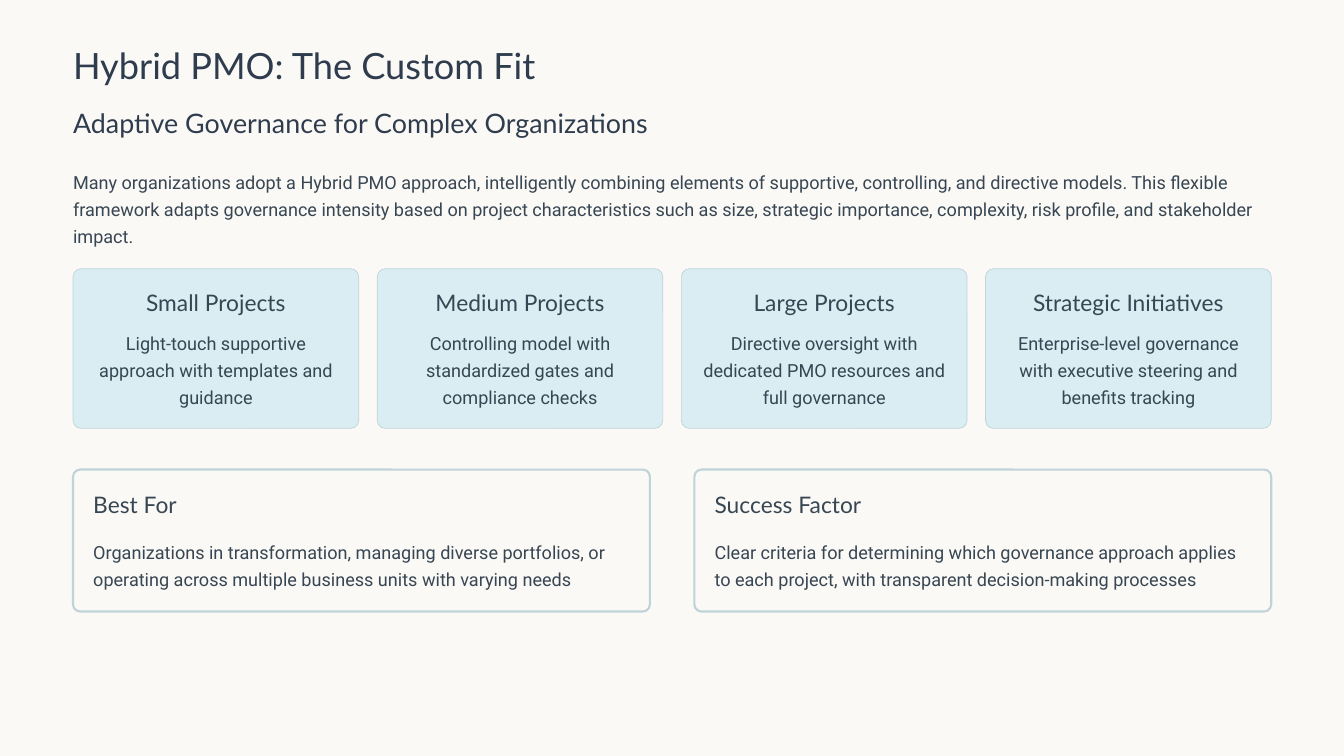
from dataclasses import dataclass, field

from pptx import Presentation
from pptx.dml.color import RGBColor
from pptx.enum import shapes, text
from pptx.util import Pt


def style(font, size, spacing, color):
    """Return the format values of one kind of text."""
    return {
        "font": {"name": font, "size": Pt(size)},
        "color": RGBColor.from_string(color),
        "spacing": Pt(spacing),
    }


@dataclass(frozen=True)
class Theme:
    """Hold the colours and type styles of the slide."""
    background: str = "FAF9F5"
    card: str = "D9EDF2"
    border: str = "BFD3D8"
    title: dict = field(default_factory=lambda: style("Lato", 31, 39, "2E3C4E"))
    subtitle: dict = field(default_factory=lambda: style("Lato", 23, 29, "2E3C4E"))
    heading: dict = field(default_factory=lambda: style("Lato", 19.5, 24, "384653"))
    body: dict = field(default_factory=lambda: style("Roboto", 15.5, 23, "384653"))


THEME = Theme()
LEFT = 62.64
WIDTH = 1027
CARDS = [
    ("Small Projects", "Light-touch supportive approach with templates and guidance"),
    ("Medium Projects", "Controlling model with standardized gates and compliance checks"),
    ("Large Projects", "Directive oversight with dedicated PMO resources and full governance"),
    ("Strategic Initiatives", "Enterprise-level governance with executive steering and benefits tracking"),
]
PANELS = [
    ("Best For", "Organizations in transformation, managing diverse portfolios, or "
     "operating across multiple business units with varying needs"),
    ("Success Factor", "Clear criteria for determining which governance approach applies "
     "to each project, with transparent decision-making processes"),
]
INTRO = (
    "Many organizations adopt a Hybrid PMO approach, intelligently combining elements of "
    "supportive, controlling, and directive models. This flexible framework adapts governance "
    "intensity based on project characteristics such as size, strategic importance, complexity, "
    "risk profile, and stakeholder impact."
)


def set_values(target, values):
    """Set each named attribute of the target."""
    for name, value in values.items():
        setattr(target, name, value)


def add_text(slide, box, words, look, wrap=True, align=text.PP_ALIGN.LEFT):
    """Add a text box without margins."""
    frame = slide.shapes.add_textbox(*map(Pt, box)).text_frame
    set_values(frame, {
        "margin_left": 0, "margin_top": 0, "margin_right": 0, "margin_bottom": 0,
        "word_wrap": wrap,
    })
    paragraph = frame.paragraphs[0]
    set_values(paragraph, {"alignment": align, "line_spacing": look["spacing"]})
    run = paragraph.add_run()
    run.text = words
    set_values(run.font, look["font"])
    run.font.color.rgb = look["color"]


def add_rounded_box(slide, box, fill, line_width, rounding):
    """Add a bordered rectangle with rounded corners."""
    shape = slide.shapes.add_shape(shapes.MSO_SHAPE.ROUNDED_RECTANGLE, *map(Pt, box))
    shape.shadow.inherit = False
    shape.adjustments[0] = rounding
    shape.fill.solid()
    shape.fill.fore_color.rgb = RGBColor.from_string(fill)
    shape.line.color.rgb = RGBColor.from_string(THEME.border)
    shape.line.width = Pt(line_width)


def add_header(slide, box):
    """Place the title, subtitle and introduction."""
    left, top, width, height = box
    add_text(slide, (left, top, width, 38.9), "Hybrid PMO: The Custom Fit", THEME.title, wrap=False)
    add_text(slide, (left, top + 54.72, width, 29.5),
             "Adaptive Governance for Complex Organizations", THEME.subtitle, wrap=False)
    add_text(slide, (left, top + 107.28, width, height - 107.28), INTRO, THEME.body)


def add_card(slide, box, heading, body):
    """Place a filled card with centred text."""
    left, top, width, height = box
    inset = 16
    center = text.PP_ALIGN.CENTER
    add_rounded_box(slide, box, THEME.card, 0.6, 0.05)
    add_text(slide, (left + inset, top + 16.56, width - 2 * inset, 24.5), heading,
             THEME.heading, wrap=False, align=center)
    add_text(slide, (left + inset, top + 50.4, width - 2 * inset, height - 66), body,
             THEME.body, align=center)


def add_panel(slide, box, heading, body):
    """Place an outlined panel with left-aligned text."""
    left, top, width, height = box
    inset = 17.28
    add_rounded_box(slide, box, THEME.background, 1.8, 0.05)
    add_text(slide, (left + inset, top + inset, width - 2 * inset, 24.5), heading,
             THEME.heading, wrap=False)
    add_text(slide, (left + inset, top + 57.6, width - 2 * inset, height - 75), body, THEME.body)


def add_row(slide, box, gap, add_item, items):
    """Spread items over equal columns of the box."""
    left, top, width, height = box
    column = (width - gap * (len(items) - 1)) / len(items)
    for index, item in enumerate(items):
        add_item(slide, (left + index * (column + gap), top, column, height), *item)


def main():
    """Build and save the slide."""
    presentation = Presentation()
    set_values(presentation, {"slide_width": Pt(1152), "slide_height": Pt(648)})
    slide = presentation.slides.add_slide(presentation.slide_layouts[6])
    slide.background.fill.solid()
    slide.background.fill.fore_color.rgb = RGBColor.from_string(THEME.background)
    add_header(slide, (LEFT, 35.28, WIDTH, 177.84))
    add_row(slide, (LEFT, 230.4, WIDTH, 136.8), 15.84, add_card, CARDS)
    add_row(slide, (LEFT, 402.48, WIDTH, 121.68), 38.16, add_panel, PANELS)
    presentation.save("out.pptx")


if __name__ == "__main__":
    main()
